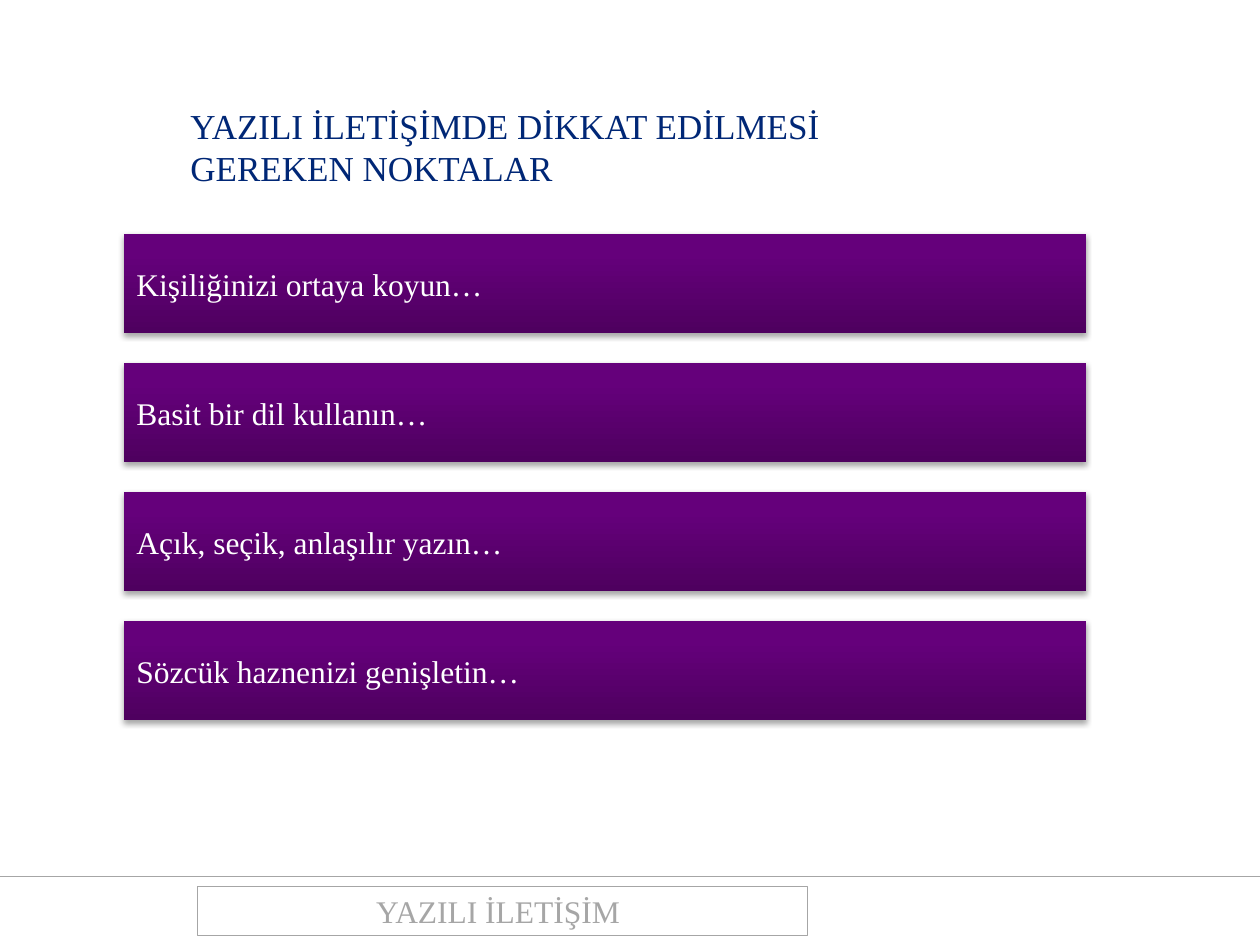
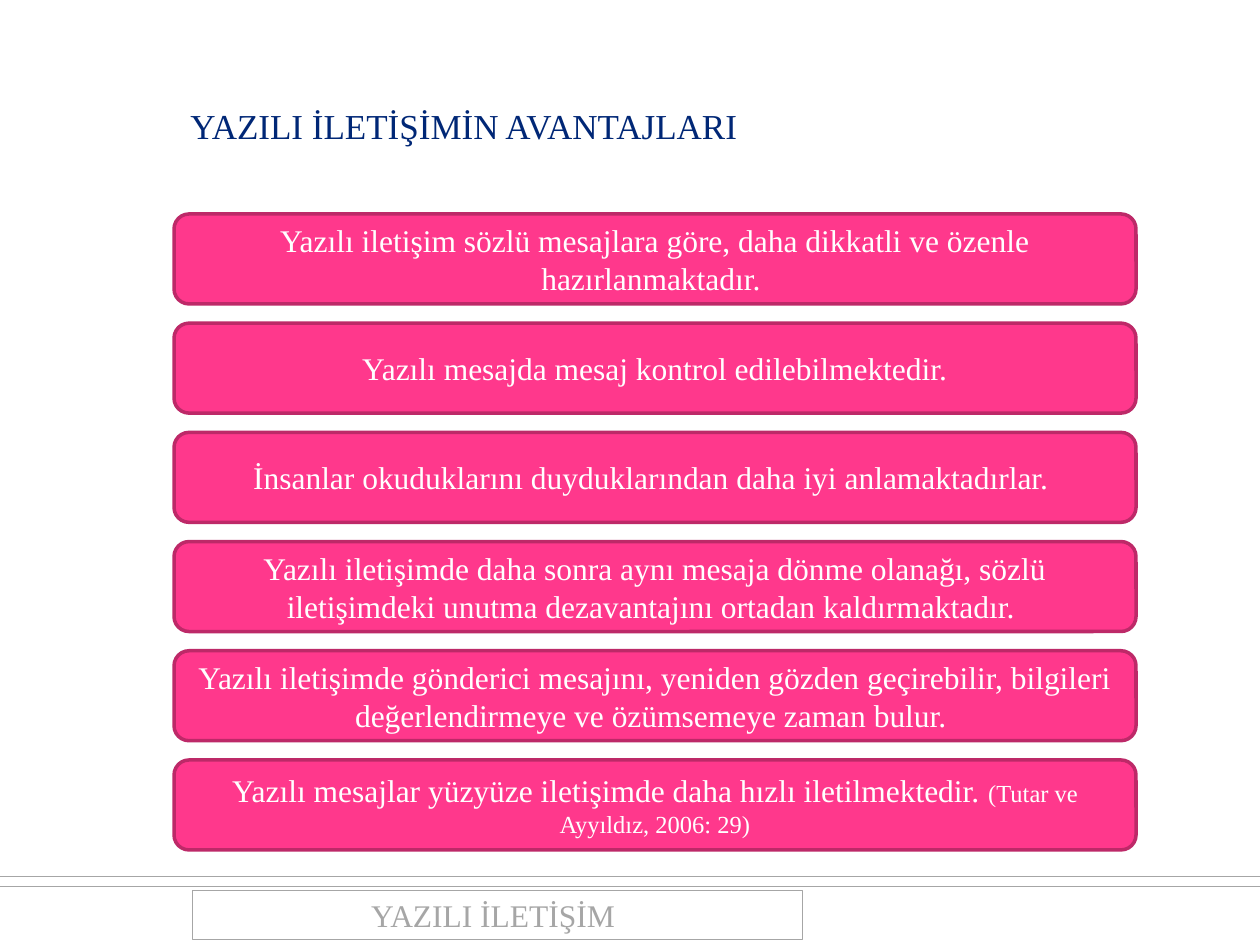
from dataclasses import dataclass
from typing import Optional

from lxml import etree
from pptx import Presentation
from pptx import util as u
from pptx.dml.color import RGBColor
from pptx.enum import shapes, text
from pptx.oxml.ns import qn

# Shared look
FONT = "Times New Roman"
NAVY = RGBColor(0x00, 0x27, 0x76)
GREY = RGBColor(0xA6, 0xA6, 0xA6)
WHITE = RGBColor(0xFF, 0xFF, 0xFF)
PURPLE = RGBColor(0x65, 0x00, 0x7B)
DARK_PURPLE = RGBColor(0x4E, 0x00, 0x5F)
PINK = RGBColor(0xFF, 0x38, 0x8C)
DARK_PINK = RGBColor(0xBD, 0x29, 0x68)

PX_PER_INCH = 126
SLIDE_W, SLIDE_H = 1260, 945
BOX_W = 962
FOOTER_TEXT = "YAZILI İLETİŞİM "

RECT = shapes.MSO_SHAPE.RECTANGLE
ROUNDED = shapes.MSO_SHAPE.ROUNDED_RECTANGLE
LEFT, CENTER = text.PP_ALIGN.LEFT, text.PP_ALIGN.CENTER


@dataclass(frozen=True)
class Shadow:
    opacity: int  # percent
    blur: float  # points
    distance: float  # points


@dataclass(frozen=True)
class Run:
    words: str
    size: int = 18
    color: RGBColor = WHITE


@dataclass(frozen=True)
class Stack:
    """Equal boxes spread evenly between the first and last top edge."""
    left: int
    first_top: int
    last_top: int
    height: int
    preset: shapes.MSO_SHAPE
    align: text.PP_ALIGN
    items: list[list[Run]]


@dataclass(frozen=True)
class Page:
    title: str
    title_height: int
    rules: list[int]
    footer_left: int
    footer_top: int
    stack: Stack


RULE_SHADOW = Shadow(40, 4, 3)
BAR_SHADOW = Shadow(35, 3.1, 1.8)

PAGES = [
    Page("YAZILI İLETİŞİMDE DİKKAT EDİLMESİ GEREKEN NOKTALAR", 97, [876], 197, 886,
         Stack(124, 234, 621, 99, RECT, LEFT, [
             [Run("Kişiliğinizi ortaya koyun…")],
             [Run("Basit bir dil kullanın…")],
             [Run("Açık, seçik, anlaşılır yazın…")],
             [Run("Sözcük haznenizi genişletin…")],
         ])),
    Page("YAZILI İLETİŞİMİN AVANTAJLARI", 55, [886, 876], 192, 890,
         Stack(174, 214, 760, 90, ROUNDED, CENTER, [
             [Run("Yazılı iletişim sözlü mesajlara göre, daha dikkatli ve özenle "
                  "hazırlanmaktadır. ")],
             [Run("Yazılı mesajda mesaj kontrol edilebilmektedir.")],
             [Run("İnsanlar okuduklarını duyduklarından daha iyi anlamaktadırlar. ")],
             [Run("Yazılı iletişimde daha sonra aynı mesaja dönme olanağı, sözlü "
                  "iletişimdeki unutma dezavantajını ortadan kaldırmaktadır. ")],
             [Run("Yazılı iletişimde gönderici mesajını, yeniden gözden geçirebilir, "
                  "bilgileri değerlendirmeye ve özümsemeye zaman bulur. ")],
             [Run("Yazılı mesajlar yüzyüze iletişimde daha hızlı iletilmektedir. "),
              Run("(Tutar ve Ayyıldız, 2006: 29)", 14)],
         ])),
]


def px(n: float) -> u.Emu:
    return u.Emu(round(n * u.Inches(1) / PX_PER_INCH))


def set_shadow(sp, shadow: Optional[Shadow] = None) -> None:
    """Replace the theme shadow with a downward one, or with none."""
    effects = etree.SubElement(sp._element.spPr, qn("a:effectLst"))
    if shadow is None:
        return
    outer = etree.SubElement(effects, qn("a:outerShdw"), {
        "blurRad": str(u.Pt(shadow.blur)), "dist": str(u.Pt(shadow.distance)),
        "dir": "5400000", "rotWithShape": "0"})
    color = etree.SubElement(outer, qn("a:srgbClr"), val="000000")
    etree.SubElement(color, qn("a:alpha"), val=str(shadow.opacity * 1000))


def set_line(line, color: RGBColor, width: float) -> None:
    line.color.rgb = color
    line.width = u.Pt(width)


def write(sp, runs: list[Run], align: text.PP_ALIGN) -> None:
    tf = sp.text_frame
    tf.word_wrap = True
    p = tf.paragraphs[0]
    p.alignment = align
    for run in runs:
        r = p.add_run()
        r.text = run.words
        r.font.name = FONT
        r.font.size = u.Pt(run.size)
        r.font.color.rgb = run.color


def add_title(s, words: str, height: int) -> None:
    sp = s.shapes.add_textbox(px(178), px(98), px(669), px(height))
    write(sp, [Run(words, 20, NAVY)], LEFT)
    sp.text_frame.auto_size = text.MSO_AUTO_SIZE.SHAPE_TO_FIT_TEXT


def add_rule(s, y: int) -> None:
    rule = s.shapes.add_connector(shapes.MSO_CONNECTOR.STRAIGHT,
                                  px(0), px(y), px(SLIDE_W), px(y))
    set_line(rule.line, GREY, 0.25)
    set_shadow(rule, RULE_SHADOW)


def add_stack(s, stack: Stack) -> None:
    pitch = (stack.last_top - stack.first_top) / (len(stack.items) - 1)
    for i, runs in enumerate(stack.items):
        sp = s.shapes.add_shape(stack.preset, px(stack.left), px(stack.first_top + i * pitch),
                                px(BOX_W), px(stack.height))
        if stack.preset == RECT:
            paint_bar(sp)
        else:
            paint_card(sp)
        sp.text_frame.vertical_anchor = text.MSO_ANCHOR.MIDDLE
        write(sp, runs, stack.align)


def paint_bar(sp) -> None:
    sp.fill.gradient()
    sp.fill.gradient_angle = 90
    stops = sp.fill.gradient_stops
    for stop, color, position in zip(stops, (DARK_PURPLE, PURPLE), (0, 0.8)):
        stop.color.rgb = color
        stop.position = position
    sp.line.fill.background()
    set_shadow(sp, BAR_SHADOW)


def paint_card(sp) -> None:
    sp.fill.solid()
    sp.fill.fore_color.rgb = PINK
    set_line(sp.line, DARK_PINK, 2)
    set_shadow(sp)


def add_footer(s, left: int, top: int) -> None:
    sp = s.shapes.add_shape(RECT, px(left), px(top), px(610), px(49))
    sp.fill.background()
    set_line(sp.line, GREY, 0.25)
    set_shadow(sp)
    sp.text_frame.vertical_anchor = text.MSO_ANCHOR.MIDDLE
    write(sp, [Run(FOOTER_TEXT, 18, GREY)], CENTER)


def main() -> None:
    prs = Presentation()
    prs.slide_width, prs.slide_height = px(SLIDE_W), px(SLIDE_H)
    for page in PAGES:
        s = prs.slides.add_slide(prs.slide_layouts[6])
        for y in page.rules:
            add_rule(s, y)
        add_title(s, page.title, page.title_height)
        add_stack(s, page.stack)
        add_footer(s, page.footer_left, page.footer_top)
    prs.save("out.pptx")


if __name__ == "__main__":
    main()
